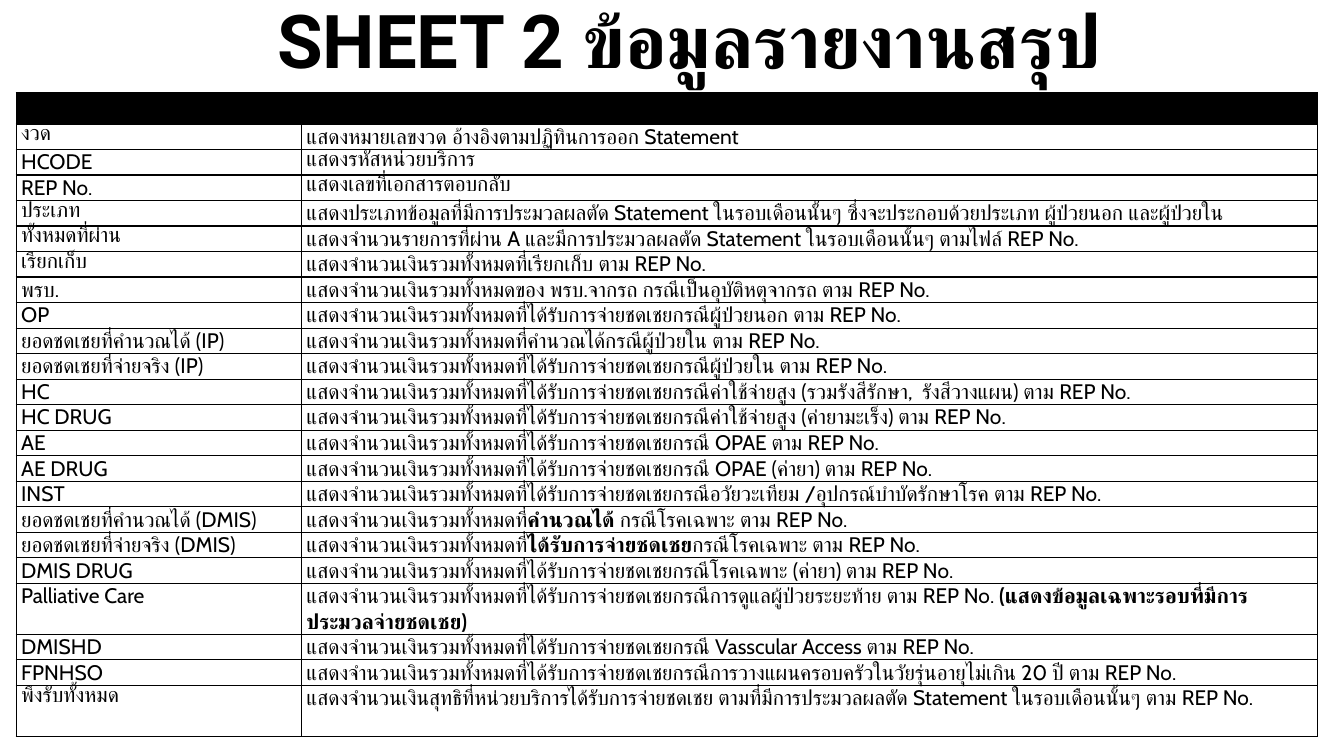
from lxml import etree
from pptx import Presentation
from pptx.dml.color import RGBColor
from pptx.enum import text as t
from pptx.oxml import ns
from pptx.util import Inches, Pt

BLACK = RGBColor(0, 0, 0)
SUM = "แสดงจำนวนเงินรวมทั้งหมด"
PAID = SUM + "ที่ได้รับการจ่ายชดเชยกรณี"
REP = " ตาม REP No."
ROWS = [
    ("งวด", "แสดงหมายเลขงวด อ้างอิงตามปฏิทินการออก Statement"),
    ("HCODE", "แสดงรหัสหน่วยบริการ"),
    ("REP No.", "แสดงเลขที่เอกสารตอบกลับ"),
    ("ประเภท", "แสดงประเภทข้อมูลที่มีการประมวลผลตัด Statement ในรอบเดือนนั้นๆ "
     "ซึ่งจะประกอบด้วยประเภท ผู้ป่วยนอก และผู้ป่วยใน"),
    ("ทั้งหมดที่ผ่าน", "แสดงจำนวนรายการที่ผ่าน A และมีการประมวลผลตัด Statement "
     "ในรอบเดือนนั้นๆ ตามไฟล์ REP No."),
    ("เรียกเก็บ", SUM + "ที่เรียกเก็บ" + REP),
    ("พรบ.", SUM + "ของ พรบ.จากรถ กรณีเป็นอุบัติหตุจากรถ" + REP),
    ("OP", PAID + "ผู้ป่วยนอก" + REP),
    ("ยอดชดเชยที่คำนวณได้ (IP)", SUM + "ที่คำนวณได้กรณีผู้ป่วยใน" + REP),
    ("ยอดชดเชยที่จ่ายจริง (IP)", PAID + "ผู้ป่วยใน" + REP),
    ("HC", PAID + "ค่าใช้จ่ายสูง (รวมรังสีรักษา,  รังสีวางแผน)" + REP),
    ("HC DRUG", PAID + "ค่าใช้จ่ายสูง (ค่ายามะเร็ง)" + REP),
    ("AE", PAID + " OPAE" + REP),
    ("AE DRUG", PAID + " OPAE (ค่ายา)" + REP),
    ("INST", PAID + "อวัยวะเทียม /อุปกรณ์บำบัดรักษาโรค" + REP),
    ("ยอดชดเชยที่คำนวณได้ (DMIS)", SUM + "ที่*คำนวณได้* กรณีโรคเฉพาะ" + REP),
    ("ยอดชดเชยที่จ่ายจริง (DMIS)", SUM + "ที่*ได้รับการจ่ายชดเชย*กรณีโรคเฉพาะ" + REP),
    ("DMIS DRUG", PAID + "โรคเฉพาะ (ค่ายา)" + REP),
    ("Palliative Care", PAID + "การดูแลผู้ป่วยระยะท้าย" + REP
     + " *(แสดงข้อมูลเฉพาะรอบที่มีการประมวลจ่ายชดเชย)*"),
    ("DMISHD", PAID + " Vasscular Access" + REP),
    ("FPNHSO", PAID + "การวางแผนครอบครัวในวัยรุ่นอายุไม่เกิน 20 ปี" + REP),
    ("พึงรับทั้งหมด", "แสดงจำนวนเงินสุทธิที่หน่วยบริการได้รับการจ่ายชดเชย "
     "ตามที่มีการประมวลผลตัด Statement ในรอบเดือนนั้นๆ" + REP),
]
TALL = ("Palliative Care", "พึงรับทั้งหมด")


def style(para, face, size, bold):
    """Set the font of a whole paragraph."""
    font = para.font
    font.name, font.size, font.bold = face, Pt(size), bold
    font.color.rgb = BLACK


def border(cell):
    """Draw a thin black line on all four sides of a cell."""
    props = cell._tc.get_or_add_tcPr()
    for i, side in enumerate(("lnL", "lnR", "lnT", "lnB")):
        line = etree.Element(ns.qn("a:" + side), w=str(Pt(1)))
        fill = etree.SubElement(line, ns.qn("a:solidFill"))
        etree.SubElement(fill, ns.qn("a:srgbClr"), val=str(BLACK))
        props.insert(i, line)


def frame_cell(cell):
    """Set the margins and border that every cell shares."""
    cell.margin_left = cell.margin_right = Inches(0.05)
    cell.margin_top = cell.margin_bottom = 0
    border(cell)


def write(cell, words):
    """Write one body cell; text between asterisks is bold."""
    para = cell.text_frame.paragraphs[0]
    for i, part in enumerate(words.split("*")):
        if part:
            run = para.add_run()
            run.text = part
            if i % 2:
                run.font.bold = True
    style(para, "Cabin", 15, False)
    cell.fill.background()
    frame_cell(cell)


def add_title(slide, left, top, width, height):
    """Place the centred heading in its box."""
    frame = slide.shapes.add_textbox(left, top, width, height).text_frame
    frame.word_wrap = True
    frame.vertical_anchor = t.MSO_ANCHOR.MIDDLE
    para = frame.paragraphs[0]
    para.text = "SHEET 2 ข้อมูลรายงานสรุป"
    para.alignment = t.PP_ALIGN.CENTER
    para.line_spacing = 0.9
    style(para, "Roboto", 53, True)


def add_fields(slide, left, top, width, height):
    """Place the table of fields, under a black band, in its box."""
    count = len(ROWS) + 1
    table = slide.shapes.add_table(count, 2, left, top, width, height).table
    name, band = Inches(2.83), Inches(0.31)
    table.columns[0].width, table.columns[1].width = name, width - name
    table.rows[0].height = band
    for cell in table.rows[0].cells:
        cell.fill.solid()
        cell.fill.fore_color.rgb = BLACK
        frame_cell(cell)
    line = (height - band) // (len(ROWS) + len(TALL))
    for r, pair in enumerate(ROWS, 1):
        table.rows[r].height = line * (2 if pair[0] in TALL else 1)
        for c, words in enumerate(pair):
            write(table.cell(r, c), words)


def main():
    """Build the slide and save it."""
    deck = Presentation()
    deck.slide_width, deck.slide_height = Inches(13.33), Inches(7.5)
    slide = deck.slides.add_slide(deck.slide_layouts[6])
    add_title(slide, Inches(0.89), Inches(-0.03), Inches(11.89), Inches(0.94))
    add_fields(slide, Inches(0.16), Inches(0.92), Inches(12.91), Inches(6.39))
    deck.save("out.pptx")


if __name__ == "__main__":
    main()
